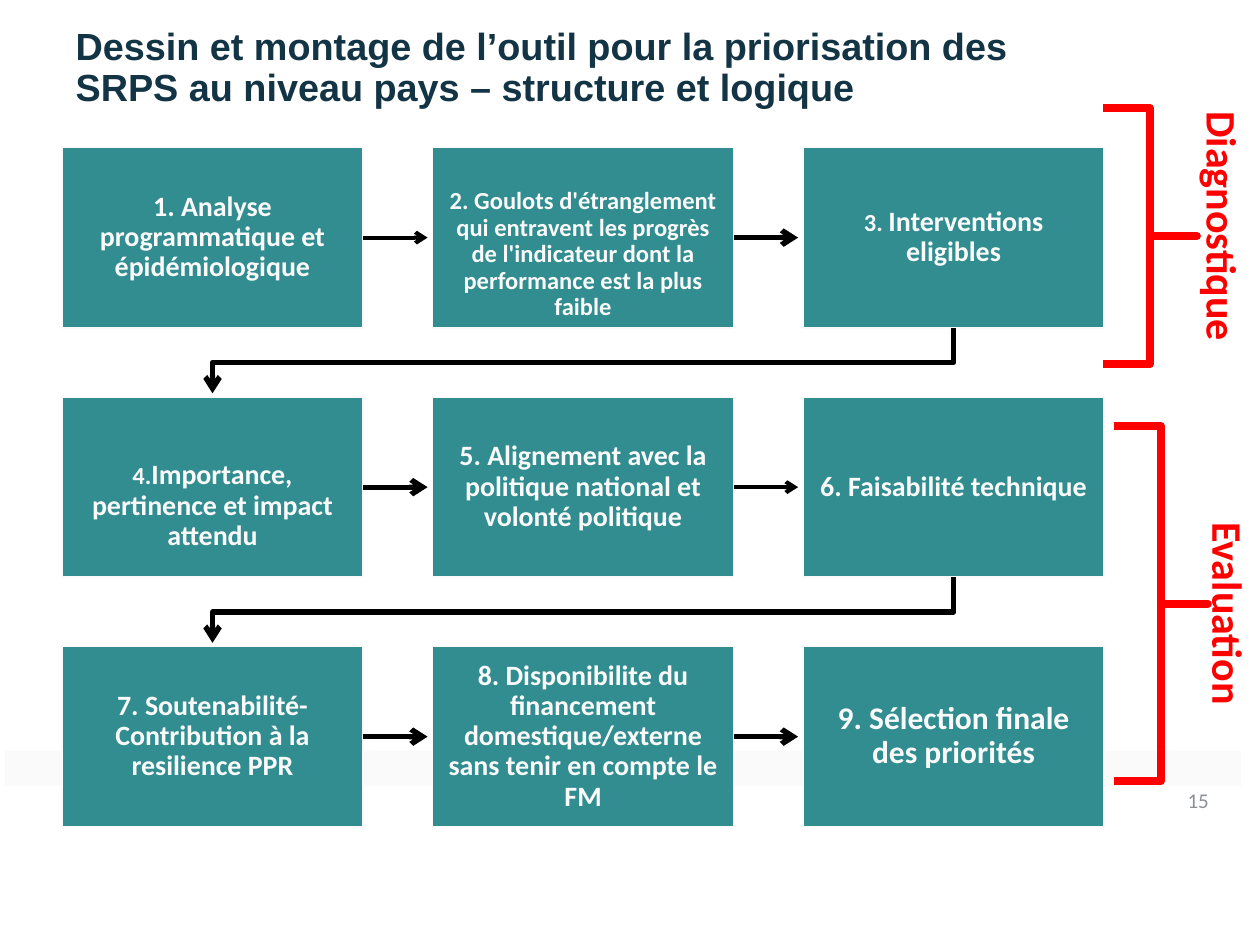
from lxml.etree import SubElement
from pptx import Presentation
from pptx.dml.color import RGBColor
from pptx.enum.shapes import MSO_CONNECTOR, MSO_SHAPE
from pptx.enum.text import MSO_ANCHOR, MSO_AUTO_SIZE, PP_ALIGN
from pptx.oxml.ns import qn
from pptx.util import Cm, Pt

COLORS = {
    "title": "133445",
    "teal": "318D8F",
    "light": "FAFAFA",
    "arrow": "000000",
    "red": "FF0000",
    "grey": "8C9094",
}
COLUMNS = 3
BOX_WIDTH, BOX_HEIGHT = 6.07, 3.64
STEP_X, STEP_Y = 7.47, 5.03
ARROW_LENGTH = 1.3

# Runs as (text, size), then top and bottom margins, then width of the arrow to the right
STEPS = [
    ([("1. Analyse programmatique et épidémiologique", 16)], 0.3, 0.3, 2.25),
    ([("2. Goulots d'étranglement qui entravent les progrès de l'indicateur "
       "dont la performance est la plus faible", 14)], 0.69, 0, 3),
    ([("3. ", 14), ("Interventions eligibles", 16)], 0.3, 0.3, None),
    ([("4.", 14), ("Importance, pertinence et impact attendu", 16)], 1.04, 0.28, 3),
    ([("5. Alignement avec la politique national et volonté politique", 16)], 0.3, 0.3, 2.25),
    ([("6. Faisabilité technique", 16)], 0.3, 0.3, None),
    ([("7. Soutenabilité-Contribution à la resilience PPR", 16)], 0.3, 0.3, 3),
    ([("8. Disponibilite du financement domestique/externe "
       "sans tenir en compte le FM", 16)], 0.3, 0.3, 3),
    ([("9. Sélection finale des priorités", 18)], 0.36, 0.36, None),
]


def color(name):
    return RGBColor.from_string(COLORS[name])


def add_span(para, text, size, fill, font="Calibri", bold=True):
    span = para.add_run()
    span.text = text
    span.font.name = font
    span.font.size = Pt(size)
    span.font.bold = bold
    span.font.color.rgb = color(fill)


def style_arrow(line_shape, width):
    line_shape.line.color.rgb = color("arrow")
    line_shape.line.width = Pt(width)
    properties = line_shape._element.spPr
    SubElement(properties.find(qn("a:ln")), qn("a:tailEnd"), type="arrow")
    if properties.find(qn("a:effectLst")) is None:
        SubElement(properties, qn("a:effectLst"))


def add_title(page, left, top, width, height):
    title = page.shapes.title
    title.left, title.top, title.width, title.height = map(Cm, (left, top, width, height))
    frame = title.text_frame
    frame.word_wrap = True
    frame.auto_size = MSO_AUTO_SIZE.NONE
    frame.vertical_anchor = MSO_ANCHOR.MIDDLE
    para = frame.paragraphs[0]
    para.alignment = PP_ALIGN.LEFT
    para.line_spacing = 0.9
    add_span(para, "Dessin et montage de l’outil pour la priorisation des SRPS "
             "au niveau pays – structure et logique", 21.6, "title", font="Arial")


def add_footer(page, left, top, width):
    band = page.shapes.add_shape(MSO_SHAPE.RECTANGLE, Cm(left), Cm(top), Cm(width), Cm(0.71))
    band.shadow.inherit = False
    band.fill.solid()
    band.fill.fore_color.rgb = color("light")
    band.line.fill.background()
    number = page.shapes.add_textbox(Cm(left + 18.8), Cm(top + 0.61), Cm(5.72), Cm(0.76))
    number.text_frame.word_wrap = True
    number.text_frame.vertical_anchor = MSO_ANCHOR.MIDDLE
    para = number.text_frame.paragraphs[0]
    para.alignment = PP_ALIGN.RIGHT
    add_span(para, "15", 12, "grey", bold=False)


def add_step(page, left, top, spans, margin_top, margin_bottom):
    box = page.shapes.add_shape(MSO_SHAPE.RECTANGLE, Cm(left), Cm(top),
                                Cm(BOX_WIDTH), Cm(BOX_HEIGHT))
    box.shadow.inherit = False
    box.fill.solid()
    box.fill.fore_color.rgb = color("teal")
    box.line.color.rgb = color("light")
    box.line.width = Pt(1)
    frame = box.text_frame
    frame.word_wrap = True
    frame.vertical_anchor = MSO_ANCHOR.MIDDLE
    frame.margin_left = frame.margin_right = Cm(0.28)
    frame.margin_top, frame.margin_bottom = Cm(margin_top), Cm(margin_bottom)
    para = frame.paragraphs[0]
    para.alignment = PP_ALIGN.CENTER
    para.line_spacing = 0.9
    for text, size in spans:
        add_span(para, text, size, "light")
    return box


def add_next_arrow(page, box, width):
    start = box.left + box.width
    middle = box.top + box.height // 2
    arrow = page.shapes.add_connector(MSO_CONNECTOR.STRAIGHT, start, middle,
                                      start + Cm(ARROW_LENGTH), middle)
    arrow.begin_connect(box, 3)
    style_arrow(arrow, width)


def add_return_arrow(page, box):
    """Lead from the last box of a row down to the first box of the next row."""
    start_x = box.left + box.width // 2
    end_x = start_x - Cm((COLUMNS - 1) * STEP_X)
    bottom = box.top + box.height
    turn = bottom + Cm(0.7)
    builder = page.shapes.build_freeform(start_x, bottom)
    builder.add_line_segments([(start_x, turn), (end_x, turn), (end_x, bottom + Cm(1.32))],
                              close=False)
    arrow = builder.convert_to_shape()
    arrow.shadow.inherit = False
    arrow.fill.background()
    style_arrow(arrow, 3)


def add_flow(page, left, top):
    for index, (spans, margin_top, margin_bottom, arrow_width) in enumerate(STEPS):
        row, column = divmod(index, COLUMNS)
        box = add_step(page, left + column * STEP_X, top + row * STEP_Y,
                       spans, margin_top, margin_bottom)
        if arrow_width:
            add_next_arrow(page, box, arrow_width)
        elif index < len(STEPS) - 1:
            add_return_arrow(page, box)


def add_phase(page, left, top, height, text, label_left, label_top, label_width):
    """Bracket a group of rows; the label position is relative to the bracket."""
    brace = page.shapes.add_shape(MSO_SHAPE.RIGHT_BRACE, Cm(left), Cm(top), Cm(1.9), Cm(height))
    brace.adjustments[0] = 0
    brace.adjustments[1] = 0.5
    brace.shadow.inherit = False
    brace.fill.background()
    brace.line.color.rgb = color("red")
    brace.line.width = Pt(4.5)
    label = page.shapes.add_textbox(Cm(left + label_left), Cm(top + label_top),
                                    Cm(label_width), Cm(1.28))
    label.rotation = 90
    label.text_frame.word_wrap = False
    label.text_frame.auto_size = MSO_AUTO_SIZE.SHAPE_TO_FIT_TEXT
    add_span(label.text_frame.paragraphs[0], text, 24, "red")


def main():
    deck = Presentation()
    deck.slide_width, deck.slide_height = Cm(25.4), Cm(19.05)
    page = deck.slides.add_slide(deck.slide_layouts[5])
    add_footer(page, 0.1, 15.14, 24.92)
    add_title(page, 1.27, 0.41, 21.39, 1.96)
    add_flow(page, 1.25, 2.97)
    add_phase(page, 22.45, 8.59, 7.16, "Evaluation", 0.2, 3.17, 4.24)
    add_phase(page, 22.23, 2.18, 5.16, "Diagnostique", -0.18, 1.78, 5.21)
    deck.save("out.pptx")


if __name__ == "__main__":
    main()
